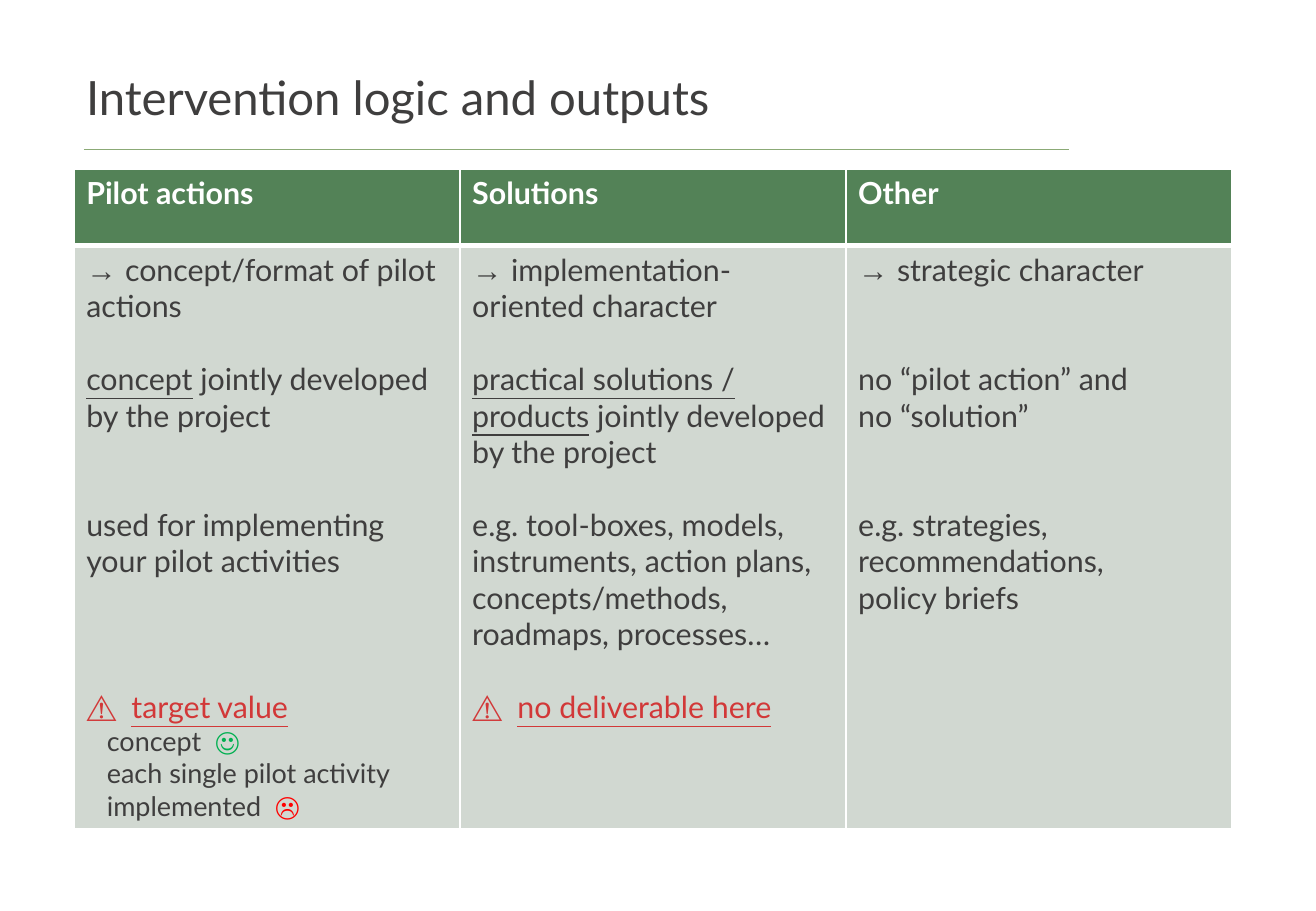
from pptx import Presentation
from pptx.dml.color import RGBColor
from pptx.enum.shapes import MSO_CONNECTOR
from pptx.enum.text import MSO_ANCHOR
from pptx.oxml import parse_xml
from pptx.oxml.ns import nsdecls
from pptx.util import Inches, Pt

DARK = RGBColor(0x3F, 0x3E, 0x3E)
WHITE = RGBColor(0xFF, 0xFF, 0xFF)
GREEN = RGBColor(0x53, 0x82, 0x57)
PALE = RGBColor(0xD1, 0xD8, 0xD1)
RULE = RGBColor(0x8B, 0xAA, 0x76)
WARNING = RGBColor(0xD2, 0x38, 0x38)
GOOD = RGBColor(0x00, 0xB0, 0x50)
BAD = RGBColor(0xFF, 0x00, 0x00)

FONT = "Lato"
BODY_SIZE, DETAIL_SIZE = 18, 16
LINE_PITCH = 21.6  # height of one body line in points
DETAIL_INDENT = Inches(0.17)

TITLE = "Intervention logic and outputs"
HEADERS = ["Pilot actions", "Solutions", "Other"]

# Run styles: colour, underline, bold, font
PLAIN = (DARK, False, False, None)
UNDER = (DARK, True, False, None)
ARROW = (DARK, False, False, "Arial")
SIGN = (WARNING, False, True, None)
ALERT = (WARNING, True, False, None)
HAPPY = (GOOD, False, False, None)
SAD = (BAD, False, False, None)

# Paragraphs: (lines of space before, is detail, runs)
COLUMNS = [
    [
        (0, False, [("→ ", ARROW), ("concept/format of pilot actions", PLAIN)]),
        (1, False, [("concept", UNDER), (" jointly developed by the project", PLAIN)]),
        (2, False, [("used for implementing your pilot activities", PLAIN)]),
        (3, False, [("⚠  ", SIGN), ("target value", ALERT)]),
        (0, True, [("concept  ", PLAIN), ("☺", HAPPY)]),
        (0, True, [("each single pilot activity", PLAIN)]),
        (0, True, [("implemented  ", PLAIN), ("☹", SAD)]),
    ],
    [
        (0, False, [("→ ", ARROW), ("implementation-oriented character", PLAIN)]),
        (1, False, [("practical solutions /", UNDER)]),
        (0, False, [("products", UNDER), (" jointly developed by the project", PLAIN)]),
        (1, False, [("e.g. tool-boxes, models, instruments, action plans, "
                     "concepts/methods, roadmaps, processes…", PLAIN)]),
        (1, False, [("⚠  ", SIGN), ("no deliverable here", ALERT)]),
    ],
    [
        (0, False, [("→ ", ARROW), ("strategic character", PLAIN)]),
        (2, False, [("no “pilot action” and", PLAIN)]),
        (0, False, [("no “solution”", PLAIN)]),
        (2, False, [("e.g. strategies, recommendations,", PLAIN)]),
        (0, False, [("policy briefs", PLAIN)]),
    ],
]


def style_cell(cell, fill, bottom_width):
    """Give the cell white borders and a solid fill."""
    tc_pr = cell._tc.get_or_add_tcPr()
    for side, width in (("L", 1), ("R", 1), ("T", 1), ("B", bottom_width)):
        tc_pr.append(parse_xml(
            f'<a:ln{side} {nsdecls("a")} w="{Pt(width)}"><a:solidFill>'
            f'<a:srgbClr val="{WHITE}"/></a:solidFill></a:ln{side}>'))
    cell.fill.solid()
    cell.fill.fore_color.rgb = fill


def set_font(font, size, colour, bold=False):
    font.name, font.size, font.bold = FONT, Pt(size), bold
    font.color.rgb = colour


def write_body(tf, paragraphs):
    for i, (gap, detail, runs) in enumerate(paragraphs):
        p = tf.add_paragraph() if i else tf.paragraphs[0]
        if gap:
            p.space_before = Pt(gap * LINE_PITCH)
        if detail:
            p._p.get_or_add_pPr().set("marL", str(DETAIL_INDENT))
        set_font(p.font, DETAIL_SIZE if detail else BODY_SIZE, DARK)
        for text, (colour, underline, bold, name) in runs:
            r = p.add_run()
            r.text = text
            r.font.color.rgb = colour
            r.font.underline = underline
            r.font.bold = bold
            if name:
                r.font.name = name


prs = Presentation()
prs.slide_width, prs.slide_height = Inches(10.83), Inches(7.5)
s = prs.slides.add_slide(prs.slide_layouts[6])

rule = s.shapes.add_connector(
    MSO_CONNECTOR.STRAIGHT, Inches(0.69), Inches(1.23), Inches(8.8), Inches(1.23))
rule.line.color.rgb = RULE
rule.line.width = Pt(0.5)
rule._element.spPr.append(parse_xml(f'<a:effectLst {nsdecls("a")}/>'))

title = s.shapes.add_textbox(Inches(0.61), Inches(0.13), Inches(7.62), Inches(0.95))
tf = title.text_frame
tf.word_wrap = True
tf.vertical_anchor = MSO_ANCHOR.BOTTOM
tf.text = TITLE
set_font(tf.paragraphs[0].font, 28, DARK)

table = s.shapes.add_table(
    2, len(HEADERS), Inches(0.61), Inches(1.39), Inches(9.53), Inches(5.41)).table
table.horz_banding = False
table.rows[0].height, table.rows[1].height = Inches(0.63), Inches(4.78)

for col, (header, paragraphs) in enumerate(zip(HEADERS, COLUMNS)):
    head, body = table.cell(0, col), table.cell(1, col)
    style_cell(head, GREEN, 3)
    head.text_frame.text = header
    set_font(head.text_frame.paragraphs[0].font, BODY_SIZE, WHITE, bold=True)
    style_cell(body, PALE, 1)
    write_body(body.text_frame, paragraphs)

prs.save("out.pptx")
